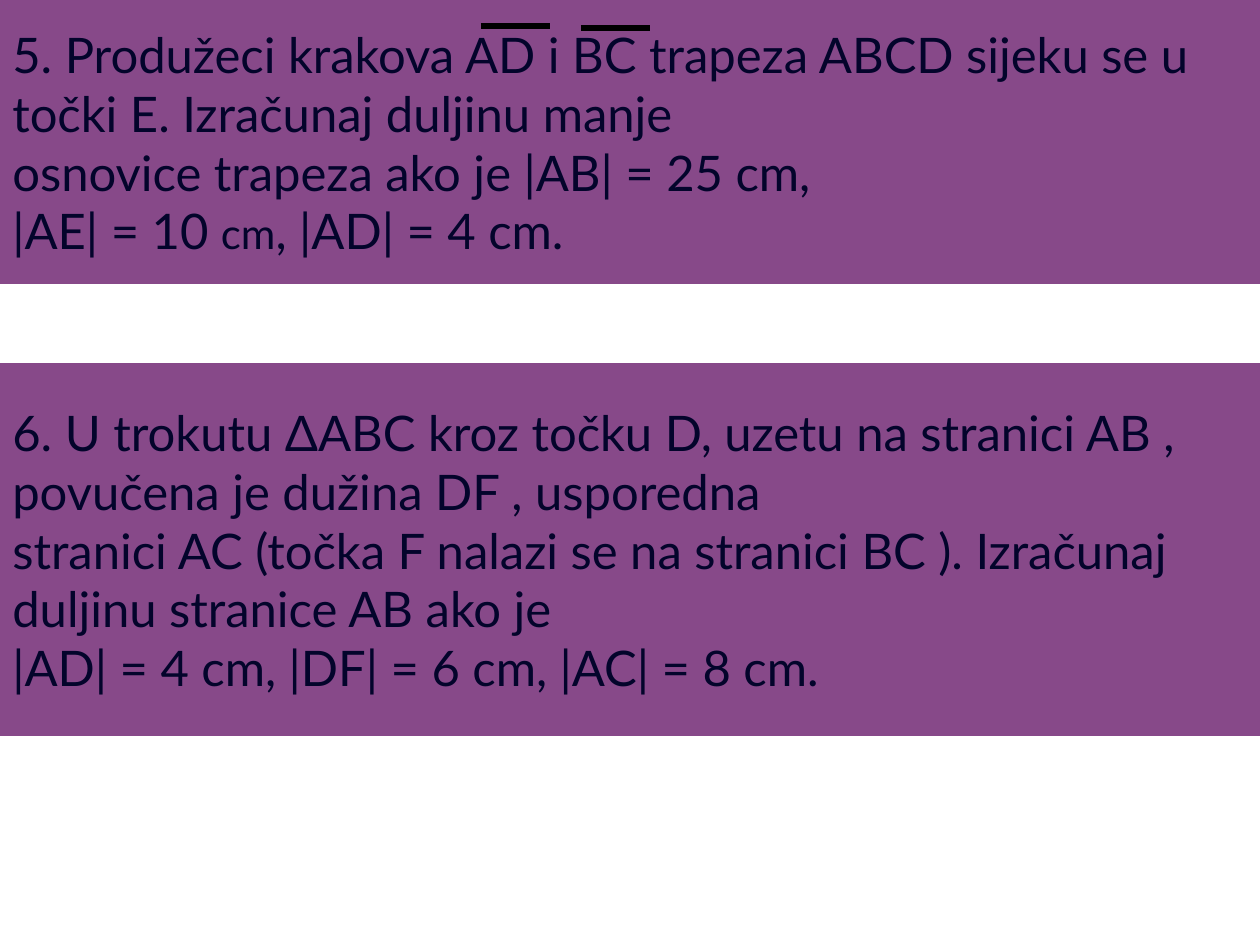
from dataclasses import dataclass

from lxml import etree
from pptx import Presentation
from pptx.dml.color import RGBColor
from pptx.enum.shapes import MSO_CONNECTOR, MSO_SHAPE
from pptx.enum.text import MSO_ANCHOR, PP_ALIGN
from pptx.oxml.ns import qn
from pptx.util import Emu, Pt

RECT = MSO_SHAPE.RECTANGLE
STRAIGHT = MSO_CONNECTOR.STRAIGHT
MIDDLE = MSO_ANCHOR.MIDDLE
LEFT = PP_ALIGN.LEFT

PX_PER_INCH = 126
WIDTH, HEIGHT = 1260, 945


def px(n):
    return Emu(round(n * 914400 / PX_PER_INCH))


@dataclass(frozen=True)
class Theme:
    font: str = "Lato"
    panel: RGBColor = RGBColor(0x87, 0x49, 0x89)
    text: RGBColor = RGBColor(0x03, 0x04, 0x2B)
    line: RGBColor = RGBColor(0, 0, 0)
    body: int = 28
    small: int = 24
    line_width: int = 3


class SlideBuilder:
    def __init__(self, slide, theme):
        self.s = slide
        self.theme = theme

    def panel(self, top, height, runs):
        """Full-width panel holding (text, size) runs."""
        sp = self.s.shapes.add_shape(RECT, 0, px(top), px(WIDTH), px(height))
        sp.shadow.inherit = False
        sp.fill.solid()
        sp.fill.fore_color.rgb = self.theme.panel
        sp.line.fill.background()
        tf = sp.text_frame
        tf.word_wrap = True
        tf.vertical_anchor = MIDDLE
        p = tf.paragraphs[0]
        p.alignment = LEFT
        for text, size in runs:
            for i, line in enumerate(text.split("\n")):
                if i:
                    p.add_line_break()
                self.run(p, line, size)

    def run(self, p, text, size):
        r = p.add_run()
        r.text = text
        r.font.name = self.theme.font
        r.font.size = Pt(size)
        r.font.color.rgb = self.theme.text

    def overline(self, left, top, width):
        cx = self.s.shapes.add_connector(
            STRAIGHT, px(left), px(top), px(left + width), px(top))
        cx.line.color.rgb = self.theme.line
        cx.line.width = Pt(self.theme.line_width)
        etree.SubElement(cx._element.spPr, qn("a:effectLst"))


def main():
    prs = Presentation()
    prs.slide_width, prs.slide_height = px(WIDTH), px(HEIGHT)
    theme = Theme()
    b = SlideBuilder(prs.slides.add_slide(prs.slide_layouts[6]), theme)

    # Problem 5: trapezoid
    b.panel(0, 284, [
        ("5. Produžeci krakova AD i BC trapeza ABCD sijeku se u točki E. "
         "Izračunaj duljinu manje\n"
         "osnovice trapeza ako je |AB| = 25 cm, \n"
         "|AE| = 10 ", theme.body),
        ("cm", theme.small),
        (", |AD| = 4 cm.", theme.body),
    ])

    # Segment marks over BC and AD
    b.overline(581, 28, 69)
    b.overline(481, 26, 69)

    # Problem 6: triangle
    b.panel(363, 373, [
        ("6. U trokutu ΔABC kroz točku D, uzetu na stranici AB , "
         "povučena je dužina DF , usporedna\n"
         "stranici AC (točka F nalazi se na stranici BC ). "
         "Izračunaj duljinu stranice AB ako je\n"
         "|AD| = 4 cm, |DF| = 6 cm, |AC| = 8 cm.", theme.body),
    ])

    prs.save("out.pptx")


if __name__ == "__main__":
    main()
